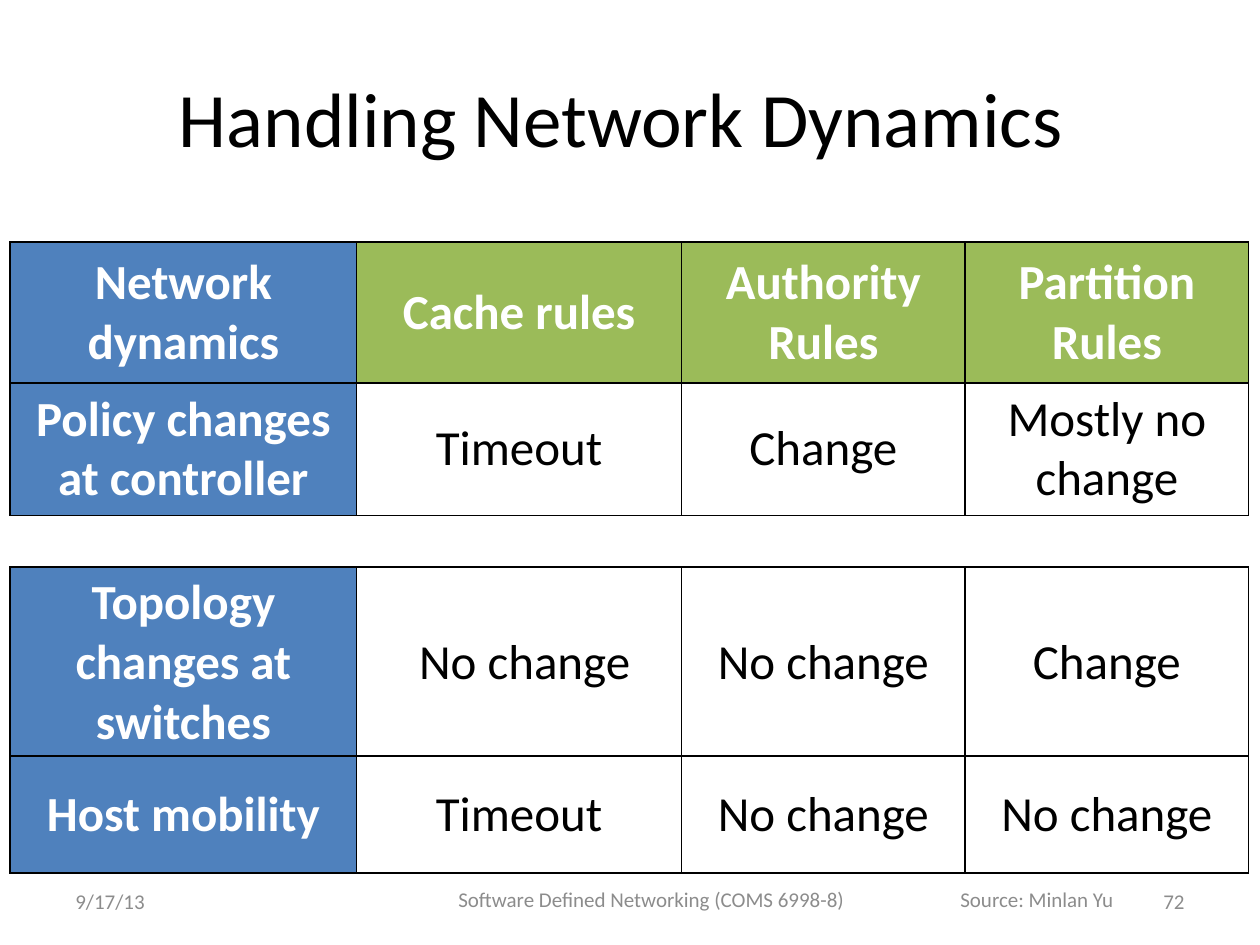
from lxml.etree import SubElement
from pptx import Presentation
from pptx.dml.color import RGBColor
from pptx.enum.text import MSO_ANCHOR, PP_ALIGN
from pptx.oxml.ns import qn
from pptx.util import Inches, Pt

FONT = "Calibri"
BLACK, WHITE, GRAY = "000000", "FFFFFF", "8C8C8C"
BLUE, GREEN = "4F81BD", "9BBB59"
COLUMN_WIDTHS = [2.75, 2.58, 2.25, 2.25]
TABLE_LEFT = 0.08
ROWS = [
    (1.92, 1.12, GREEN, ["Network dynamics", "Cache rules", "Authority Rules", "Partition Rules"]),
    (3.04, 1.03, WHITE, ["Policy changes at controller", "Timeout", "Change", "Mostly no change"]),
    (4.5, 1.5, WHITE, ["Topology changes at switches", " No change", "No change", "Change"]),
    (6, 0.93, WHITE, ["Host mobility", "Timeout", "No change", "No change"]),
]
FOOTERS = [
    (0.5, 6.95, 2.33, 0.4, "9/17/13", PP_ALIGN.LEFT),
    (3.42, 6.92, 3.5, 0.43, "Software Defined Networking (COMS 6998-8)", PP_ALIGN.CENTER),
    (7.17, 6.95, 2.33, 0.4, "72", PP_ALIGN.RIGHT),
    (6.48, 6.92, 3.5, 0.43, "Source: Minlan Yu", PP_ALIGN.CENTER),
]


def color(value):
    return RGBColor.from_string(value)


def write_text(frame, text, size, shade, align=PP_ALIGN.CENTER, bold=False):
    frame.text = text
    frame.word_wrap = True
    para = frame.paragraphs[0]
    para.alignment = align
    font = para.runs[0].font
    font.name, font.size, font.bold = FONT, Pt(size), bold
    font.color.rgb = color(shade)


def add_borders(cell):
    properties = cell._tc.get_or_add_tcPr()
    for side in ("a:lnL", "a:lnR", "a:lnT", "a:lnB"):
        line = SubElement(properties, qn(side), w=str(Pt(1)))
        fill = SubElement(line, qn("a:solidFill"))
        SubElement(fill, qn("a:srgbClr"), val=BLACK)


def add_row_table(page, top, height, fill, texts):
    frame = page.shapes.add_table(
        1, len(texts), Inches(TABLE_LEFT), Inches(top),
        Inches(sum(COLUMN_WIDTHS)), Inches(height))
    table = frame.table
    for index, (width, text) in enumerate(zip(COLUMN_WIDTHS, texts)):
        table.columns[index].width = Inches(width)
        cell = table.cell(0, index)
        cell_fill = BLUE if index == 0 else fill
        heading = cell_fill != WHITE
        add_borders(cell)
        cell.fill.solid()
        cell.fill.fore_color.rgb = color(cell_fill)
        cell.vertical_anchor = MSO_ANCHOR.MIDDLE
        write_text(cell.text_frame, text, 28, WHITE if heading else BLACK, bold=heading)


def add_title(page, text):
    title = page.shapes.title
    title.left, title.top = Inches(0.5), Inches(0.3)
    title.width, title.height = Inches(9), Inches(1.25)
    title.text_frame.vertical_anchor = MSO_ANCHOR.MIDDLE
    write_text(title.text_frame, text, 44, BLACK)


def add_footer(page, left, top, width, height, text, align):
    box = page.shapes.add_textbox(Inches(left), Inches(top), Inches(width), Inches(height))
    box.text_frame.vertical_anchor = MSO_ANCHOR.MIDDLE
    write_text(box.text_frame, text, 12, GRAY, align)


def main():
    deck = Presentation()
    deck.slide_width, deck.slide_height = Inches(10), Inches(7.5)
    page = deck.slides.add_slide(deck.slide_layouts[5])
    add_title(page, "Handling Network Dynamics ")
    for row in ROWS:
        add_row_table(page, *row)
    for footer in FOOTERS:
        add_footer(page, *footer)
    deck.save("out.pptx")


if __name__ == "__main__":
    main()
